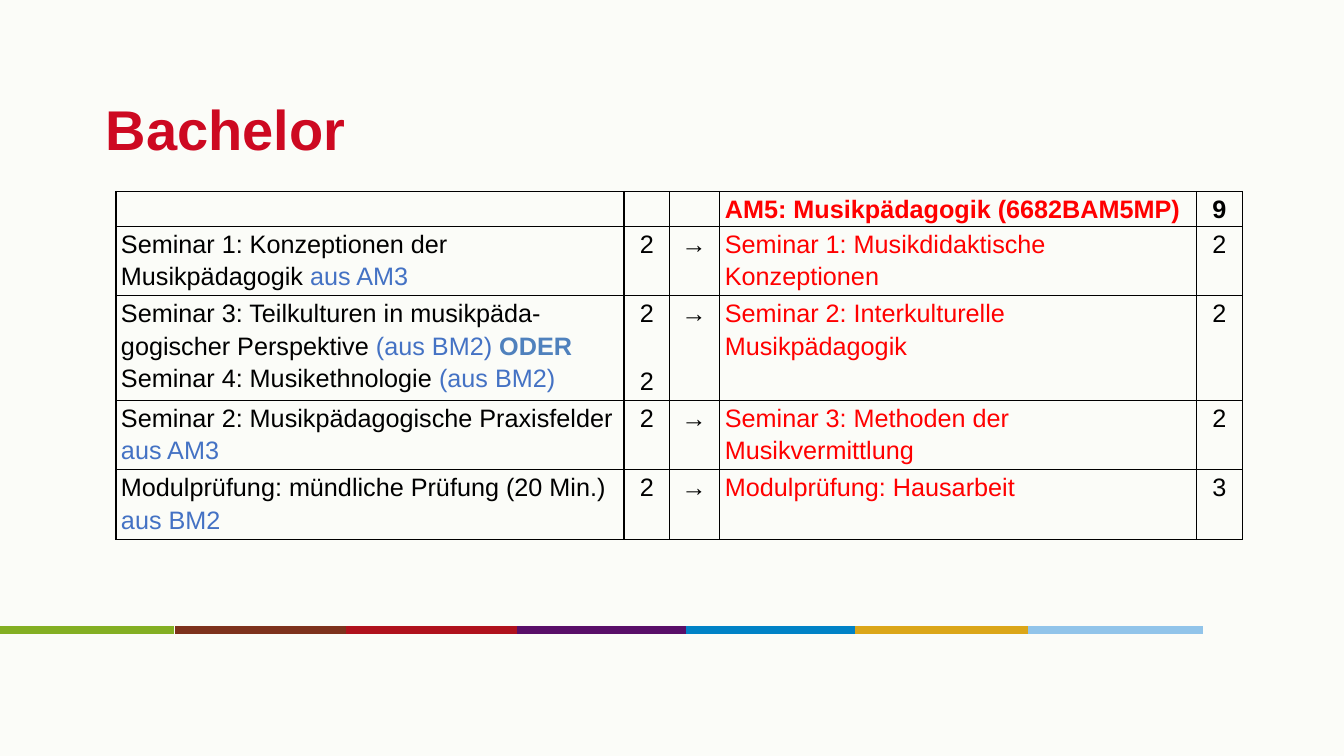
"""Build the Bachelor module comparison slide."""
from lxml.etree import SubElement
from pptx import Presentation
from pptx.dml.color import RGBColor
from pptx.enum.shapes import MSO_CONNECTOR
from pptx.enum.text import MSO_ANCHOR, PP_ALIGN
from pptx.oxml.ns import qn
from pptx.util import Inches, Pt

COLOURS = {
    "background": "FBFCF8", "title": "CD0921", "text": "000000",
    "new": "FF0000", "origin": "4472C4", "choice": "4F81BD",
}
FONT = "Arial"
SLIDE_WIDTH, SLIDE_HEIGHT = 13.33, 7.5

TITLE = "Bachelor"
TITLE_BOX = (1, 0.65, 11.33, 1.25)
TABLE_LEFT, TABLE_TOP = 1.15, 1.9
COLUMN_WIDTHS = [5.04, 0.45, 0.5, 4.73, 0.45]
ROW_HEIGHTS = [0.34, 0.66, 1.02, 0.66, 0.68]
CENTRED_COLUMNS = (1, 4)
ARROW = [(" →", "text")]

ROWS = [
    [[], [], [], [("AM5: Musikpädagogik (6682BAM5MP)", "new")], [("9", "text")]],
    [
        [("Seminar 1: Konzeptionen der Musikpädagogik ", "text"), ("aus AM3", "origin")],
        [("2", "text")], ARROW,
        [("Seminar 1: Musikdidaktische Konzeptionen", "new")], [("2", "text")],
    ],
    [
        [("Seminar 3: Teilkulturen in musikpäda-gogischer Perspektive ", "text"),
         ("(aus BM2) ", "origin"), ("ODER\n", "choice"),
         ("Seminar 4: Musikethnologie", "text"), (" (aus BM2)", "origin")],
        [("2\n\n2", "text")], ARROW,
        [("Seminar 2: Interkulturelle Musikpädagogik", "new")], [("2", "text")],
    ],
    [
        [("Seminar 2: Musikpädagogische Praxisfelder ", "text"), ("aus AM3", "origin")],
        [("2", "text")], ARROW,
        [("Seminar 3: Methoden der Musikvermittlung", "new")], [("2", "text")],
    ],
    [
        [("Modulprüfung: mündliche Prüfung (20 Min.) ", "text"), ("aus BM2", "origin")],
        [("2", "text")], ARROW,
        [("Modulprüfung: Hausarbeit", "new")], [("3", "text")],
    ],
]

STRIPE_TOP, STRIPE_LENGTH = 6.25, 1.73
STRIPES = [
    (0, "83AF23"), (1.74, "7D321D"), (3.43, "AF111D"), (5.13, "590F68"),
    (6.8, "0082C6"), (8.48, "DBA619"), (10.2, "91C4EA"),
]


def format_run(run, size, colour, bold):
    run.font.name = FONT
    run.font.size = Pt(size)
    run.font.bold = bold
    run.font.color.rgb = RGBColor.from_string(COLOURS[colour])


def add_stripes(slide):
    for left, colour in STRIPES:
        stripe = slide.shapes.add_connector(
            MSO_CONNECTOR.STRAIGHT, Inches(left), Inches(STRIPE_TOP),
            Inches(left + STRIPE_LENGTH), Inches(STRIPE_TOP))
        stripe.line.color.rgb = RGBColor.from_string(colour)
        stripe.line.width = Pt(5.5)
        SubElement(stripe.element.spPr, qn("a:effectLst"))


def add_title(slide):
    frame = slide.shapes.add_textbox(*map(Inches, TITLE_BOX)).text_frame
    frame.word_wrap = True
    frame.vertical_anchor = MSO_ANCHOR.MIDDLE
    frame.margin_left = frame.margin_right = Inches(0.05)
    frame.margin_top = frame.margin_bottom = Inches(0.05)
    frame.text = TITLE
    format_run(frame.paragraphs[0].runs[0], 40, "title", True)


def add_borders(cell):
    properties = cell._tc.get_or_add_tcPr()
    for position, side in enumerate(("lnL", "lnR", "lnT", "lnB")):
        border = properties.makeelement(qn(f"a:{side}"), {"w": str(Pt(1))})
        fill = SubElement(border, qn("a:solidFill"))
        SubElement(fill, qn("a:srgbClr"), val=COLOURS["text"])
        properties.insert(position, border)


def fill_cell(cell, pieces, centred, header):
    cell.margin_left = cell.margin_right = Inches(0.05)
    cell.margin_top = cell.margin_bottom = 0
    cell.fill.background()
    add_borders(cell)
    paragraph = cell.text_frame.paragraphs[0]
    paragraph.line_spacing = 1.15
    paragraph.alignment = PP_ALIGN.CENTER if centred else PP_ALIGN.LEFT
    for text, colour in pieces:
        for index, line in enumerate(text.split("\n")):
            if index:
                paragraph.add_line_break()
            if line:
                run = paragraph.add_run()
                run.text = line
                format_run(run, 18, colour, header or colour == "choice")


def add_module_table(slide):
    table = slide.shapes.add_table(
        len(ROW_HEIGHTS), len(COLUMN_WIDTHS), Inches(TABLE_LEFT), Inches(TABLE_TOP),
        Inches(sum(COLUMN_WIDTHS)), Inches(sum(ROW_HEIGHTS))).table
    table.first_row = table.horz_banding = False
    for column, width in zip(table.columns, COLUMN_WIDTHS):
        column.width = Inches(width)
    for row_index, (row, height) in enumerate(zip(table.rows, ROW_HEIGHTS)):
        row.height = Inches(height)
        for column_index, pieces in enumerate(ROWS[row_index]):
            fill_cell(row.cells[column_index], pieces,
                      column_index in CENTRED_COLUMNS, row_index == 0)


def main():
    presentation = Presentation()
    presentation.slide_width = Inches(SLIDE_WIDTH)
    presentation.slide_height = Inches(SLIDE_HEIGHT)
    slide = presentation.slides.add_slide(presentation.slide_layouts[6])
    slide.background.fill.solid()
    slide.background.fill.fore_color.rgb = RGBColor.from_string(COLOURS["background"])
    add_stripes(slide)
    add_title(slide)
    add_module_table(slide)
    presentation.save("out.pptx")


if __name__ == "__main__":
    main()
